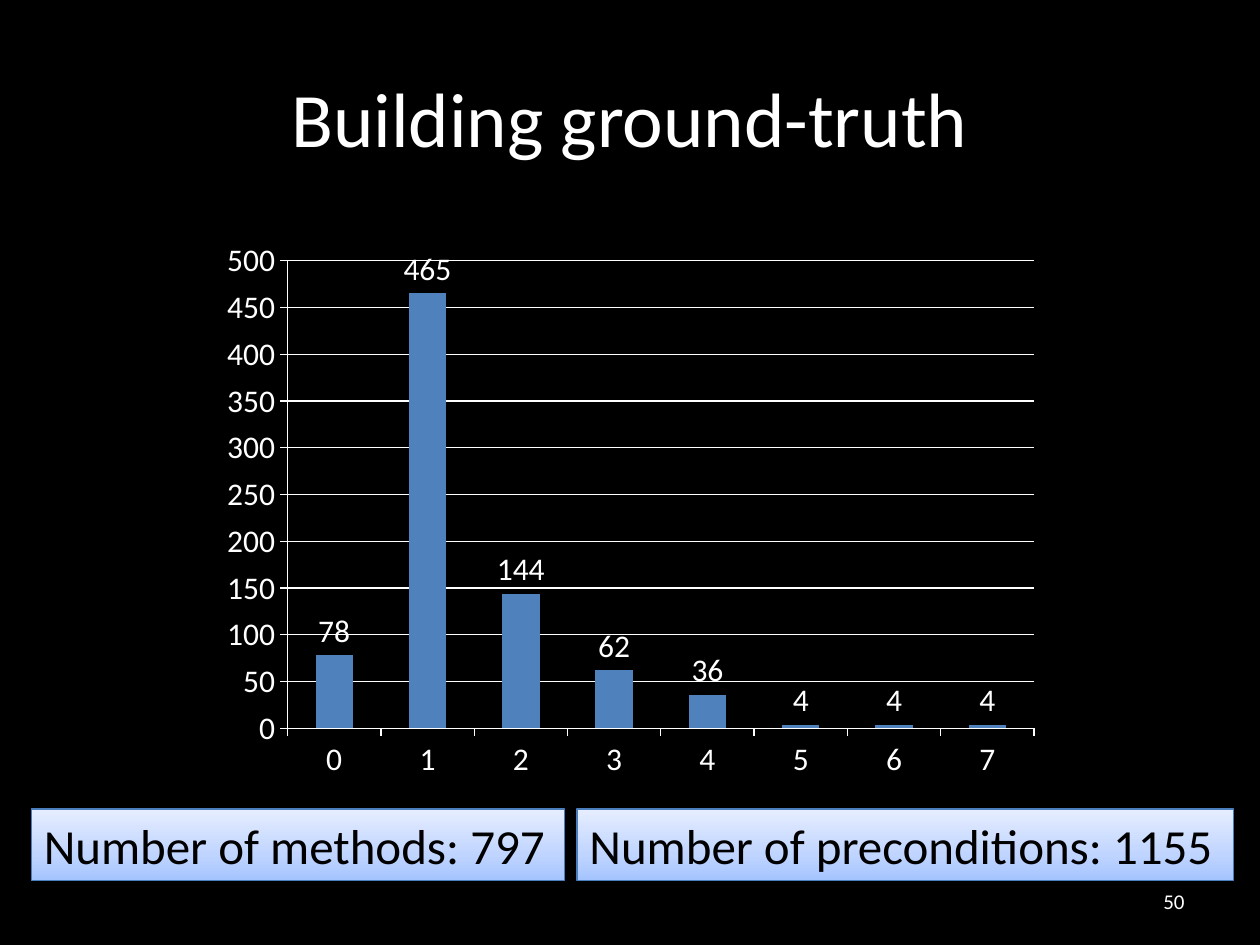
import copy
from dataclasses import dataclass

import pptx
import pptx.chart.data
import pptx.dml.color
import pptx.enum.chart
import pptx.enum.shapes
import pptx.enum.text
import pptx.oxml.ns
import pptx.util

Inches = pptx.util.Inches
Pt = pptx.util.Pt
Align = pptx.enum.text.PP_ALIGN
Anchor = pptx.enum.text.MSO_ANCHOR


def rgb(value):
    return pptx.dml.color.RGBColor.from_string(value)


@dataclass(frozen=True)
class Theme:
    font: str = "Calibri"
    background: str = "000000"
    light: str = "FFFFFF"
    dark: str = "000000"
    bar: str = "4F81BD"
    box_line: str = "4B7EBC"
    box_stops: tuple = ((0, "A4C4FF"), (0.35, "BFD4FF"), (1, "E6EEFF"))
    title_size: int = 44
    total_size: int = 28
    chart_size: int = 18
    number_size: int = 12


THEME = Theme()


def style_font(font, size, color):
    font.name = THEME.font
    font.size = Pt(size)
    font.color.rgb = rgb(color)


def write_line(frame, text, size, color, align, anchor):
    frame.vertical_anchor = anchor
    line = frame.paragraphs[0]
    line.alignment = align
    run = line.add_run()
    run.text = text
    style_font(run.font, size, color)


def add_label(slide, place, text, size, align):
    frame = slide.shapes.add_textbox(*map(Inches, place)).text_frame
    frame.word_wrap = True
    write_line(frame, text, size, THEME.light, align, Anchor.MIDDLE)


def fill_with_gradient(shape):
    shape.fill.gradient()
    shape.fill.gradient_angle = 90
    # The default gradient has two stops; add the middle one
    stop_list = shape.fill._fill._gradFill.find(pptx.oxml.ns.qn("a:gsLst"))
    stop_list.insert(1, copy.deepcopy(stop_list[0]))
    for stop, (position, color) in zip(shape.fill.gradient_stops, THEME.box_stops):
        stop.position = position
        stop.color.rgb = rgb(color)


def add_total(slide, left, width, text):
    total = slide.shapes.add_shape(
        pptx.enum.shapes.MSO_SHAPE.RECTANGLE,
        Inches(left), Inches(6.42), Inches(width), Inches(0.57))
    total.shadow.inherit = False
    fill_with_gradient(total)
    total.line.color.rgb = rgb(THEME.box_line)
    total.line.width = Pt(0.75)
    frame = total.text_frame
    frame.word_wrap = False
    frame.auto_size = pptx.enum.text.MSO_AUTO_SIZE.SHAPE_TO_FIT_TEXT
    write_line(frame, text, THEME.total_size, THEME.dark, Align.LEFT, Anchor.TOP)


def style_axis(axis):
    axis.major_tick_mark = pptx.enum.chart.XL_TICK_MARK.OUTSIDE
    axis.minor_tick_mark = pptx.enum.chart.XL_TICK_MARK.NONE
    axis.format.line.color.rgb = rgb(THEME.light)
    axis.format.line.width = Pt(0.75)


def add_precondition_chart(slide, counts):
    data = pptx.chart.data.CategoryChartData()
    data.categories = [str(number) for number in range(len(counts))]
    data.add_series("Series 1", counts)
    chart = slide.shapes.add_chart(
        pptx.enum.chart.XL_CHART_TYPE.COLUMN_CLUSTERED,
        Inches(1.67), Inches(1.83), Inches(6.67), Inches(4.44), data).chart
    chart.has_legend = False
    chart.has_title = False
    style_font(chart.font, THEME.chart_size, THEME.light)

    # Axes and gridlines
    style_axis(chart.category_axis)
    style_axis(chart.value_axis)
    chart.value_axis.has_major_gridlines = True
    gridline = chart.value_axis.major_gridlines.format.line
    gridline.color.rgb = rgb(THEME.light)
    gridline.width = Pt(0.75)

    # Bars and their values
    plot = chart.plots[0]
    plot.gap_width = 150
    plot.vary_by_categories = False
    bars = plot.series[0]
    bars.format.fill.solid()
    bars.format.fill.fore_color.rgb = rgb(THEME.bar)
    bars.data_labels.show_value = True
    bars.data_labels.position = pptx.enum.chart.XL_LABEL_POSITION.OUTSIDE_END
    style_font(bars.data_labels.font, THEME.chart_size, THEME.light)


def main():
    deck = pptx.Presentation()
    deck.slide_width, deck.slide_height = Inches(10), Inches(7.5)
    slide = deck.slides.add_slide(deck.slide_layouts[6])
    slide.background.fill.solid()
    slide.background.fill.fore_color.rgb = rgb(THEME.background)

    # Title and slide number
    add_label(slide, (0.5, 0.3, 9, 1.25), "Building ground-truth",
              THEME.title_size, Align.CENTER)
    add_label(slide, (7.17, 6.95, 2.33, 0.4), "50",
              THEME.number_size, Align.RIGHT)

    # Totals below the chart
    add_total(slide, 0.25, 4.23, "Number of methods: 797")
    add_total(slide, 4.58, 5.21, "Number of preconditions: 1155")

    # Methods by number of preconditions
    add_precondition_chart(slide, (78, 465, 144, 62, 36, 4, 4, 4))

    deck.save("out.pptx")


if __name__ == "__main__":
    main()
